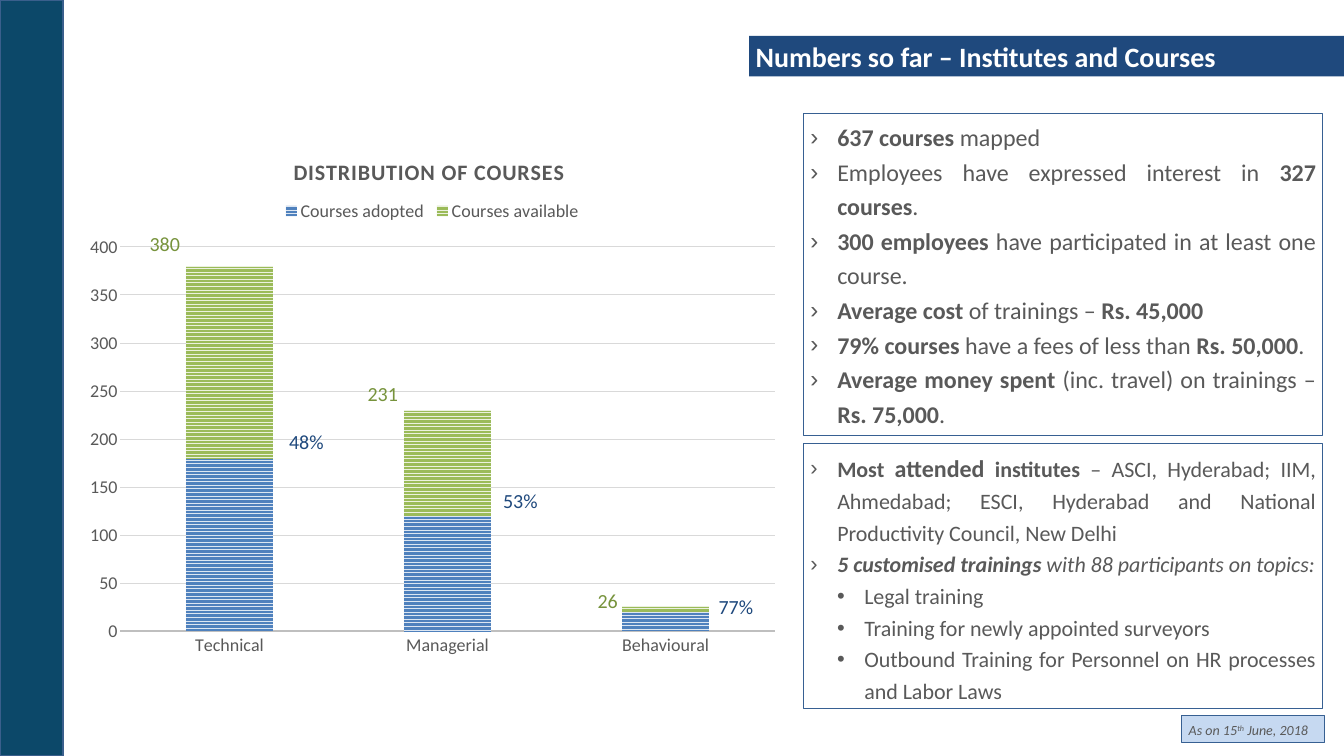
from lxml.etree import SubElement
from pptx import Presentation
from pptx.chart.data import CategoryChartData
from pptx.dml.color import RGBColor
from pptx.enum.chart import XL_CHART_TYPE as ChartType, XL_LEGEND_POSITION as LegendPos, XL_TICK_MARK as Tick
from pptx.enum.dml import MSO_PATTERN as Pattern
from pptx.enum.shapes import MSO_SHAPE as Preset
from pptx.enum.text import MSO_ANCHOR as Anchor, PP_ALIGN as Align
from pptx.oxml import parse_xml
from pptx.oxml.ns import qn
from pptx.util import Pt

HEADING = "Numbers so far – Institutes and Courses"
AS_ON = [("", [("As on 15", "i"), ("th", "i^"), (" June, 2018", "i")])]
COURSE_FACTS = [
    ("›", [("637 courses ", "b"), ("mapped", "")]),
    ("›", [("Employees have expressed interest in ", ""), ("327 courses", "b"), (".", "")]),
    ("›", [("300 employees ", "b"), ("have participated in at least one course.", "")]),
    ("›", [("Average cost", "b"), (" of trainings – ", ""), ("Rs. 45,000", "b")]),
    ("›", [("79% courses ", "b"), ("have a fees of less than ", ""), ("Rs. 50,000", "b"), (".", "")]),
    ("›", [("Average money spent ", "b"), ("(inc. travel) on trainings – ", ""),
           ("Rs. 75,000", "b"), (".", "")]),
]
INSTITUTE_FACTS = [
    ("›", [("Most ", "b"), ("attended", "b+"), (" institutes ", "b"),
           ("– ASCI, Hyderabad; IIM, Ahmedabad; ESCI, Hyderabad and National "
            "Productivity Council, New Delhi", "")]),
    ("›", [("5 customised trainings ", "bi"), ("with 88 participants on topics:", "i")]),
    ("•", [("Legal training", "")]),
    ("•", [("Training for newly appointed surveyors", "")]),
    ("•", [("Outbound Training for Personnel on HR processes and Labor Laws", "")]),
]
CHART_TITLE = "DISTRIBUTION OF COURSES"
COURSE_TYPES = ["Technical", "Managerial", "Behavioural"]
COURSES = {"Courses adopted": (180, 120, 20), "Courses available": (200, 110, 6)}
ADOPTED_SHARES = [("48%", 282, 425.5), ("53%", 496, 484.5), ("77%", 711.5, 590.5)]
TOTALS = [("380", 142.5, 228), ("231", 360.5, 378), ("26", 590.5, 584.5)]


class Theme:
    font, bullet_font = "Calibri", "Arial"
    band, band_edge = "0C4869", "3A5F8C"
    navy, edge, pale = "1F497D", "376092", "C6D9F1"
    grey, white, green = "595959", "FFFFFF", "77933C"
    axis, grid = "BFBFBF", "D9D9D9"
    series = [("4F81BD", "DCE6F2"), ("9BBB59", "EBF1DE")]
    heading, fact, institute, chart_title = 28, 24, 22, 22
    label, axis_text, date = 20, 18, 14


rgb = RGBColor.from_string
INDENT = 27

deck = Presentation()
deck.slide_width, deck.slide_height = Pt(1344), Pt(756)
slide = deck.slides.add_slide(deck.slide_layouts[6])


def style(font, size, color, bold=False, italic=False):
    font.name, font.size, font.bold, font.italic = Theme.font, Pt(size), bold, italic
    font.color.rgb = rgb(color)


def add_box(area, fill=None, line=None, weight=0.75):
    box = slide.shapes.add_shape(Preset.RECTANGLE, *map(Pt, area))
    box.shadow.inherit = False
    if fill:
        box.fill.solid()
        box.fill.fore_color.rgb = rgb(fill)
    else:
        box.fill.background()
    if line:
        box.line.color.rgb = rgb(line)
        box.line.width = Pt(weight)
    else:
        box.line.fill.background()
    box.text_frame.word_wrap = True
    box.text_frame.vertical_anchor = Anchor.MIDDLE
    return box


def add_bullet(paragraph, mark):
    level = "›•".index(mark) + 1
    props = paragraph._p.get_or_add_pPr()
    props.set("marL", str(Pt(INDENT * level)))
    props.set("indent", str(-Pt(INDENT)))
    SubElement(props, qn("a:buFont")).set("typeface", Theme.bullet_font)
    SubElement(props, qn("a:buChar")).set("char", mark)


def write_facts(box, facts, size):
    frame = box.text_frame
    frame.margin_right = Pt(6.5)
    for number, (mark, pieces) in enumerate(facts):
        paragraph = frame.add_paragraph() if number else frame.paragraphs[0]
        paragraph.alignment, paragraph.line_spacing = Align.JUSTIFY, 1.2
        if mark:
            add_bullet(paragraph, mark)
        for words, marks in pieces:
            run = paragraph.add_run()
            run.text = words
            style(run.font, Theme.fact if "+" in marks else size, Theme.grey, "b" in marks, "i" in marks)
            if "^" in marks:
                run._r.get_or_add_rPr().set("baseline", "30000")


def add_label(words, left, top, color):
    label = slide.shapes.add_textbox(Pt(left), Pt(top), Pt(78.5), Pt(39.6))
    label.text_frame.word_wrap = True
    label.text_frame.text = words
    style(label.text_frame.paragraphs[0].runs[0].font, Theme.label, color)


def place(part, index, inner=False, **fractions):
    for old in part.findall(qn("c:layout")):
        part.remove(old)
    layout = parse_xml('<c:layout xmlns:c="http://schemas.openxmlformats.org/drawingml/2006/chart"/>')
    manual = SubElement(layout, qn("c:manualLayout"))
    if inner:
        SubElement(manual, qn("c:layoutTarget")).set("val", "inner")
    for mode in ("xMode", "yMode"):
        SubElement(manual, qn("c:" + mode)).set("val", "edge")
    for side, share in fractions.items():
        SubElement(manual, qn("c:" + side)).set("val", str(share))
    part.insert(index, layout)


def add_course_chart():
    data = CategoryChartData()
    data.categories = COURSE_TYPES
    for name, counts in COURSES.items():
        data.add_series(name, counts)
    area = map(Pt, (75.5, 136.8, 713.5, 529.2))
    chart = slide.shapes.add_chart(ChartType.COLUMN_STACKED, *area, data).chart
    style(chart.font, Theme.axis_text, Theme.grey)

    chart.has_title = True
    title = chart.chart_title
    title.text_frame.text = CHART_TITLE
    title_run = title.text_frame.paragraphs[0].runs[0]
    style(title_run.font, Theme.chart_title, Theme.grey, bold=True)
    title_run._r.get_or_add_rPr().set("spc", "100")
    place(title._element, 1, x=0.3, y=0.03)

    chart.has_legend = True
    legend = chart.legend
    legend.position, legend.include_in_layout = LegendPos.TOP, False
    style(legend.font, Theme.axis_text, Theme.grey)
    place(legend._element, 1, x=0.285, y=0.115, w=0.43, h=0.05)
    place(chart._chartSpace.chart.plotArea, 0, inner=True, x=0.063, y=0.208, w=0.917, h=0.726)

    plot = chart.plots[0]
    plot.gap_width, plot.overlap, plot.vary_by_categories = 150, 100, False
    for series, (front, back) in zip(plot.series, Theme.series):
        fill = series.format.fill
        fill.patterned()
        fill.pattern = Pattern.NARROW_HORIZONTAL
        fill.fore_color.rgb, fill.back_color.rgb = rgb(front), rgb(back)
        series.format.line.fill.background()

    types, counts = chart.category_axis, chart.value_axis
    for axis in (types, counts):
        axis.major_tick_mark = axis.minor_tick_mark = Tick.NONE
        style(axis.tick_labels.font, Theme.axis_text, Theme.grey)
    types.format.line.color.rgb = rgb(Theme.axis)
    types.format.line.width = Pt(1.5)
    counts.minimum_scale, counts.maximum_scale, counts.major_unit = 0, 400, 50
    counts.format.line.fill.background()
    counts.major_gridlines.format.line.color.rgb = rgb(Theme.grid)
    counts.major_gridlines.format.line.width = Pt(0.75)


add_box((0, 0, 63.4, 756), Theme.band, Theme.band_edge, 2)

heading = add_box((749.2, 36, 594.8, 40.3), Theme.navy)
heading.text_frame.margin_left = heading.text_frame.margin_right = Pt(6.5)
heading.text_frame.margin_top = heading.text_frame.margin_bottom = Pt(3)
heading.text_frame.text = HEADING
heading.text_frame.paragraphs[0].alignment = Align.LEFT
style(heading.text_frame.paragraphs[0].runs[0].font, Theme.heading, Theme.white, bold=True)

write_facts(add_box((1181.6, 715, 143.3, 27.4), Theme.pale, Theme.edge), AS_ON, Theme.date)
courses = add_box((803.2, 113.5, 519.3, 321.5), line=Theme.edge)
courses.text_frame.vertical_anchor = Anchor.TOP
write_facts(courses, COURSE_FACTS, Theme.fact)
add_course_chart()
for labels, color in ((ADOPTED_SHARES, Theme.navy), (TOTALS, Theme.green)):
    for words, left, top in labels:
        add_label(words, left, top, color)
write_facts(add_box((803.2, 443.8, 519.3, 264.2), line=Theme.edge), INSTITUTE_FACTS, Theme.institute)

deck.save("out.pptx")
